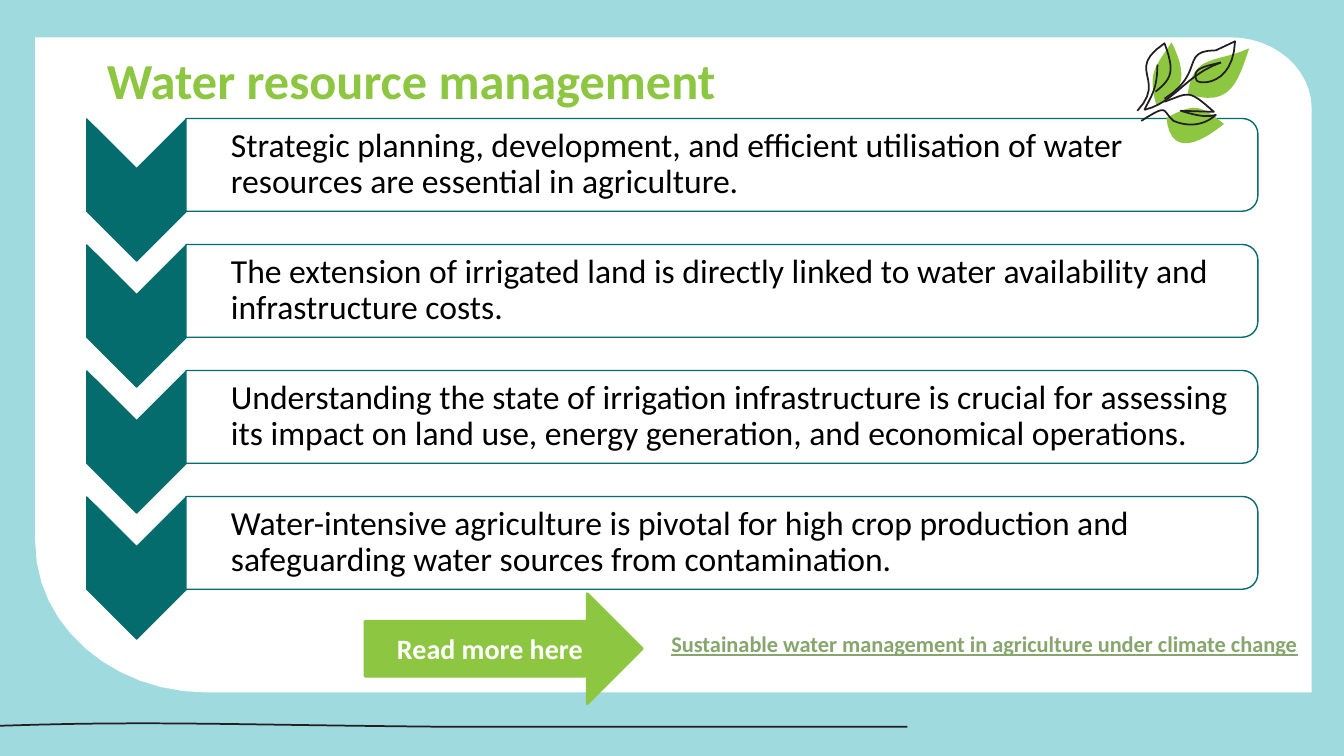
from pptx import Presentation
from pptx.dml.color import RGBColor
from pptx.enum.shapes import MSO_SHAPE
from pptx.enum.text import MSO_ANCHOR, PP_ALIGN
from pptx.util import Pt

PX = 9144  # 100 px to the inch
FONT = "Calibri"
AQUA = RGBColor(0x9F, 0xDA, 0xDF)
WHITE = RGBColor(0xFF, 0xFF, 0xFF)
BLACK = RGBColor(0x00, 0x00, 0x00)
INK = RGBColor(0x23, 0x1F, 0x20)
GREEN = RGBColor(0x8D, 0xC6, 0x41)
TEAL = RGBColor(0x05, 0x6C, 0x6E)
LINK_GREEN = RGBColor(0x87, 0xA6, 0x6E)
CHEVRON = MSO_SHAPE.CHEVRON
ROUNDED_SIDE = MSO_SHAPE.ROUND_2_SAME_RECTANGLE
RIGHT_ARROW = MSO_SHAPE.RIGHT_ARROW
TOP, MIDDLE = MSO_ANCHOR.TOP, MSO_ANCHOR.MIDDLE
LEFT, CENTER = PP_ALIGN.LEFT, PP_ALIGN.CENTER
CURVE_STEPS = 12

POINTS = [
    "Strategic planning, development, and efficient utilisation of water "
    "resources are essential in agriculture.",
    "The extension of irrigated land is directly linked to water availability "
    "and infrastructure costs.",
    "Understanding the state of irrigation infrastructure is crucial for "
    "assessing its impact on land use, energy generation, and economical operations.",
    "Water-intensive agriculture is pivotal for high crop production and "
    "safeguarding water sources from contamination.",
]
ROW_STEP = 125

# Outlines: a start point, then (x, y) lines or six-number Bézier curves
PANEL = [(35, 37), (1220, 37), (1265, 37, 1301, 69, 1301, 108), (1301, 687),
         (205, 687), (111, 687, 35, 620, 35, 538)]
WAVE = [(0, 720), (150, 715, 220, 719, 443, 721), (900, 721)]
LEAVES = [
    [(1147, 105), (1138, 72, 1145, 68, 1162, 42), (1176, 70, 1178, 92, 1147, 105)],
    [(1178, 93), (1184, 53, 1205, 63, 1239, 48), (1228, 80, 1221, 108, 1178, 93)],
    [(1214, 123), (1190, 104, 1185, 102, 1157, 117), (1160, 150, 1182, 149, 1214, 123)],
]
LEAF_STROKES = [
    # left leaf: edges and vein
    [(1128, 110), (1158, 78, 1115, 70, 1155, 43), (1165, 70, 1163, 78, 1146, 91)],
    [(1148, 64), (1148, 88, 1142, 95, 1135, 109)],
    # right leaf: stem and edges
    [(1135, 109), (1165, 102, 1175, 75, 1211, 62)],
    [(1155, 98), (1196, 72, 1170, 50, 1206, 50), (1225, 41),
     (1223, 85, 1190, 84, 1187, 80), (1181, 68, 1195, 66, 1211, 62)],
    # lower leaf: stem and edges
    [(1132, 120), (1160, 102, 1152, 110, 1164, 120), (1178, 126, 1194, 125, 1206, 114),
     (1195, 117, 1185, 114, 1171, 110), (1204, 111), (1178, 88, 1180, 92, 1155, 101)],
]

presentation = Presentation()
presentation.slide_width = 1333 * PX
presentation.slide_height = 750 * PX
slide = presentation.slides.add_slide(presentation.slide_layouts[5])
shapes = slide.shapes


def draw_outline(outline, fill=None):
    """Draw a closed filled outline, or an open ink stroke."""
    vertices = [outline[0]]
    for segment in outline[1:]:
        if len(segment) == 2:
            vertices.append(segment)
            continue
        x0, y0 = vertices[-1]
        x1, y1, x2, y2, x3, y3 = segment
        for step in range(1, CURVE_STEPS + 1):
            t = step / CURVE_STEPS
            a, b, c, d = (1 - t) ** 3, 3 * t * (1 - t) ** 2, 3 * t * t * (1 - t), t ** 3
            vertices.append((a * x0 + b * x1 + c * x2 + d * x3,
                             a * y0 + b * y1 + c * y2 + d * y3))
    vertices = [(x * PX, y * PX) for x, y in vertices]
    builder = shapes.build_freeform(*vertices[0], scale=1.0)
    builder.add_line_segments(vertices[1:], close=fill is not None)
    shape = builder.convert_to_shape()
    shape.shadow.inherit = False
    if fill is None:
        shape.fill.background()
        shape.line.color.rgb = INK
        shape.line.width = Pt(1.25)
    else:
        shape.fill.solid()
        shape.fill.fore_color.rgb = fill
        shape.line.fill.background()


def set_text(shape, text, size, color, bold=False, align=LEFT, anchor=TOP, spacing=1.0):
    frame = shape.text_frame
    frame.text = text
    frame.word_wrap = True
    frame.vertical_anchor = anchor
    paragraph = frame.paragraphs[0]
    paragraph.alignment = align
    paragraph.line_spacing = spacing
    font = paragraph.runs[0].font
    font.name, font.size, font.bold = FONT, Pt(size), bold
    font.color.rgb = color
    return font


# Background, panel and wavy line
slide.background.fill.solid()
slide.background.fill.fore_color.rgb = AQUA
draw_outline(PANEL, fill=WHITE)
draw_outline(WAVE)

# Title, raised above the panel
title = shapes.title
title.left, title.top, title.width, title.height = 96 * PX, 51 * PX, 1159 * PX, 88 * PX
set_text(title, "Water resource management", 36, GREEN, bold=True, spacing=0.9)
shapes._spTree.append(title._element)

# Chevron rows; chevrons and bars are turned a quarter
for row, point in enumerate(POINTS):
    offset = row * ROW_STEP
    chevron = shapes.add_shape(CHEVRON, 65 * PX, (139 + offset) * PX, 141 * PX, 99 * PX)
    bar = shapes.add_shape(ROUNDED_SIDE, 670 * PX, (offset - 368) * PX, 92 * PX, 1063 * PX)
    for shape, fill in ((chevron, TEAL), (bar, WHITE)):
        shape.rotation = 90
        shape.shadow.inherit = False
        shape.fill.solid()
        shape.fill.fore_color.rgb = fill
        shape.line.color.rgb = TEAL
        shape.line.width = Pt(1)
    label = shapes.add_textbox(185 * PX, (122 + offset) * PX, 1058 * PX, 83 * PX)
    set_text(label, point, 24, BLACK, anchor=MIDDLE, spacing=0.9)
    frame = label.text_frame
    frame.margin_left = 44 * PX
    frame.margin_right = frame.margin_top = frame.margin_bottom = 2 * PX

# Reading link and arrow
link = shapes.add_textbox(656 * PX, 620 * PX, 677 * PX, 37 * PX)
link_font = set_text(link, "Sustainable water management in agriculture under climate change",
                     16, LINK_GREEN, bold=True)
link_font.underline = True
arrow = shapes.add_shape(RIGHT_ARROW, 362 * PX, 589 * PX, 275 * PX, 109 * PX)
arrow.shadow.inherit = False
arrow.fill.solid()
arrow.fill.fore_color.rgb = GREEN
arrow.line.color.rgb = GREEN
arrow.line.width = Pt(2)
set_text(arrow, "Read more here", 20, WHITE, bold=True, align=CENTER, anchor=MIDDLE)

# Leaf decoration
for leaf in LEAVES:
    draw_outline(leaf, fill=GREEN)
for stroke in LEAF_STROKES:
    draw_outline(stroke)

presentation.save("out.pptx")
